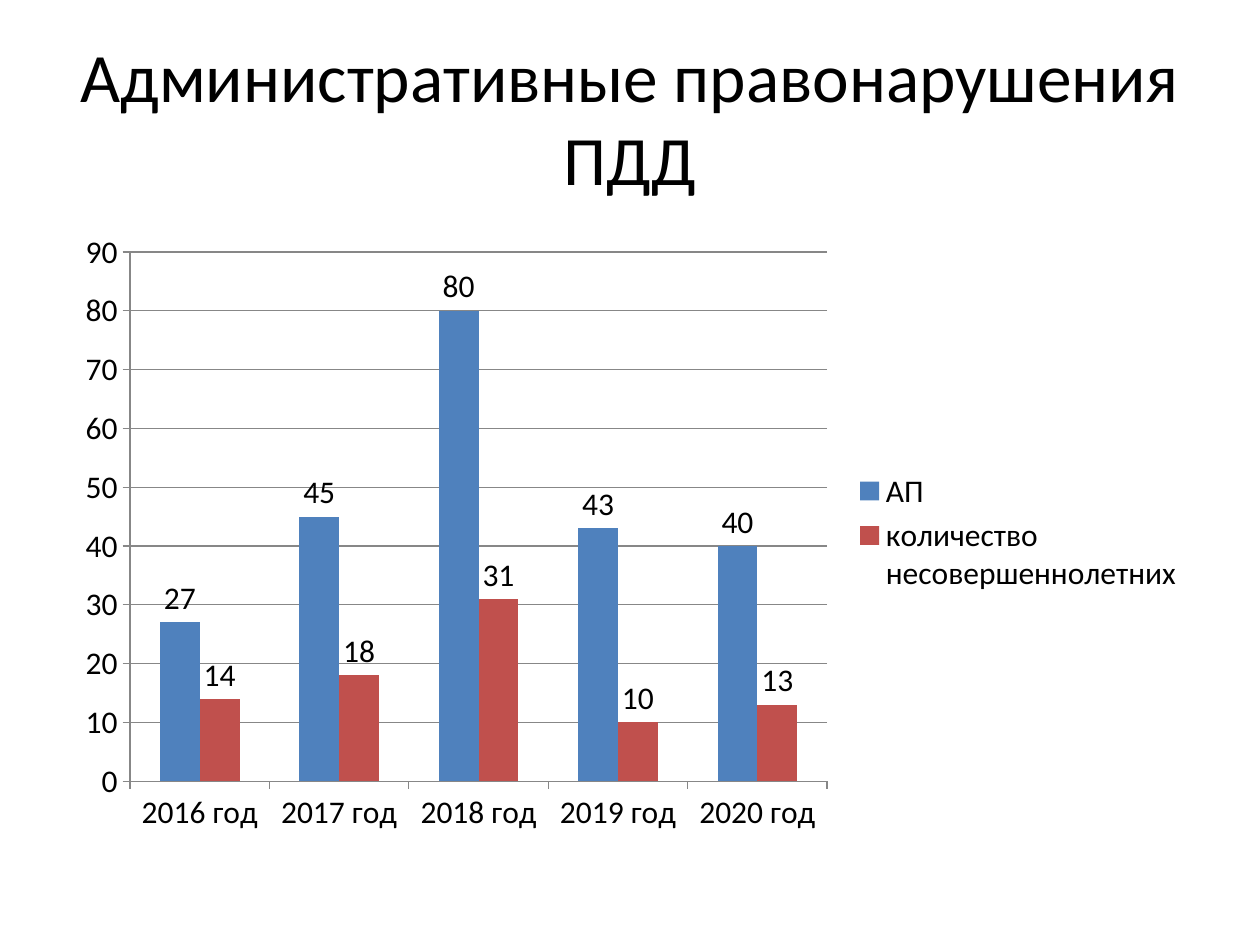
from dataclasses import dataclass
from typing import Any

from pptx import Presentation
from pptx.chart.data import CategoryChartData
from pptx.dml.color import RGBColor
from pptx.enum.chart import XL_CHART_TYPE, XL_LABEL_POSITION, XL_LEGEND_POSITION, XL_TICK_MARK
from pptx.enum.text import MSO_ANCHOR, MSO_AUTO_SIZE, PP_ALIGN
from pptx.util import Inches, Pt

COLORS = {"text": "000000", "blue": "4F81BD", "red": "C0504D", "grid": "878787"}
FONT = "Calibri"
YEARS = [f"{year} год" for year in range(2016, 2021)]


@dataclass
class Series:
    name: str
    values: tuple[int, ...]
    color: str


SERIES = [
    Series("АП", (27, 45, 80, 43, 40), "blue"),
    Series("количество несовершеннолетних", (14, 18, 31, 10, 13), "red"),
]


def rgb(name: str) -> RGBColor:
    return RGBColor.from_string(COLORS[name])


def style(font: Any, size: float, color: str = "text") -> None:
    font.name = FONT
    font.size = Pt(size)
    font.color.rgb = rgb(color)


def write(frame: Any, text: str, *, size: float, align: PP_ALIGN, anchor: MSO_ANCHOR) -> None:
    frame.word_wrap = True
    frame.auto_size = MSO_AUTO_SIZE.NONE
    frame.vertical_anchor = anchor
    frame.text = text
    line = frame.paragraphs[0]
    line.alignment = align
    style(line.runs[0].font, size)


def rule(line: Any) -> None:
    line.color.rgb = rgb("grid")
    line.width = Pt(0.75)


def plot(slide: Any, items: list[Series]) -> None:
    data = CategoryChartData(number_format="General")
    data.categories = YEARS
    for item in items:
        data.add_series(item.name, item.values)
    chart = slide.shapes.add_chart(
        XL_CHART_TYPE.COLUMN_CLUSTERED,
        Inches(0.5), Inches(1.75), Inches(9), Inches(4.95), data,
    ).chart
    style(chart.font, 18)
    chart.has_title = False
    chart.has_legend = True
    chart.legend.position = XL_LEGEND_POSITION.RIGHT
    chart.legend.include_in_layout = False

    for axis in (chart.category_axis, chart.value_axis):
        axis.major_tick_mark = XL_TICK_MARK.OUTSIDE
        axis.minor_tick_mark = XL_TICK_MARK.NONE
        rule(axis.format.line)
    scale = chart.value_axis
    scale.minimum_scale, scale.maximum_scale, scale.major_unit = 0, 90, 10
    scale.has_major_gridlines = True
    rule(scale.major_gridlines.format.line)

    bars = chart.plots[0]
    bars.gap_width = 150
    bars.overlap = 0
    bars.vary_by_categories = False
    for bar, item in zip(bars.series, items):
        bar.format.fill.solid()
        bar.format.fill.fore_color.rgb = rgb(item.color)
        labels = bar.data_labels
        labels.show_value = True
        labels.position = XL_LABEL_POSITION.OUTSIDE_END
        style(labels.font, 18)


def main() -> None:
    deck = Presentation()
    deck.slide_width, deck.slide_height = Inches(10), Inches(7.5)
    slide = deck.slides.add_slide(deck.slide_layouts[5])
    title = slide.shapes.title
    title.left, title.top = Inches(0.5), Inches(0.3)
    title.width, title.height = Inches(9), Inches(1.25)
    write(title.text_frame, "Административные правонарушения ПДД",
          size=39.6, align=PP_ALIGN.CENTER, anchor=MSO_ANCHOR.MIDDLE)
    plot(slide, SERIES)
    deck.save("out.pptx")


if __name__ == "__main__":
    main()
